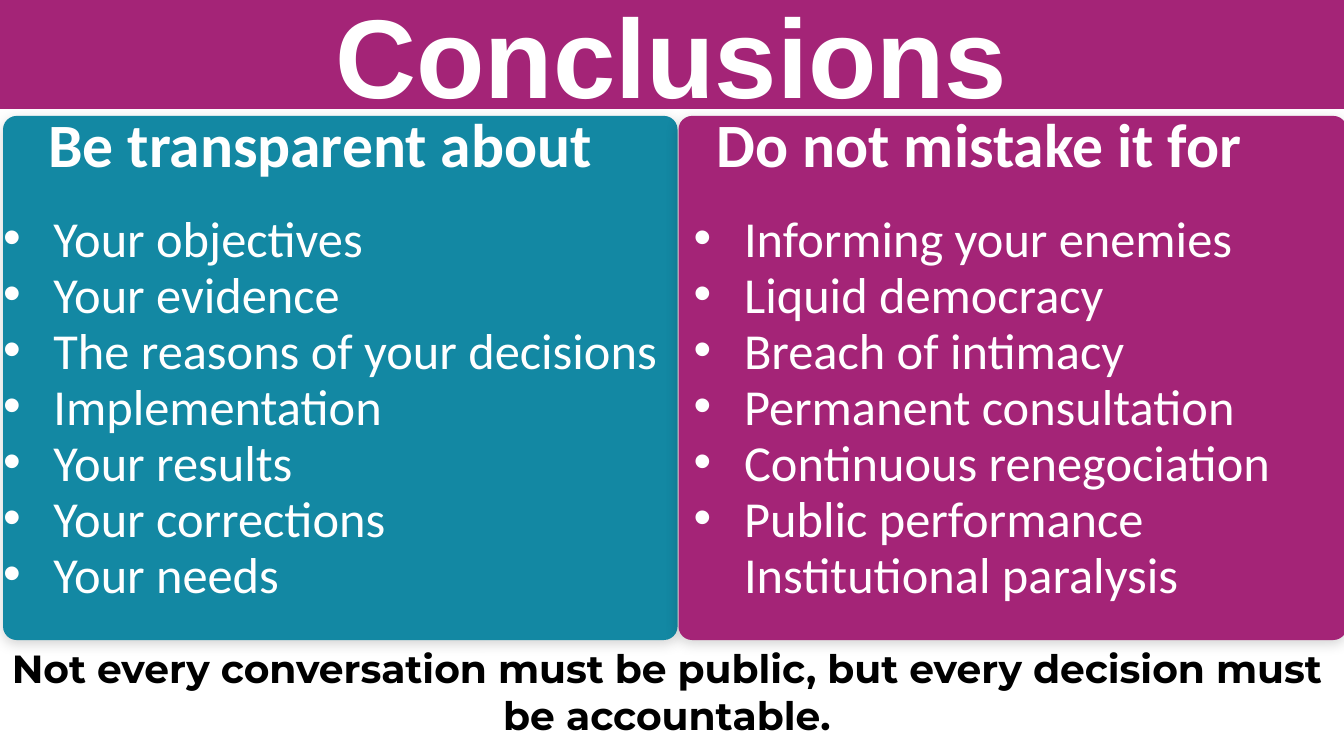
from lxml.etree import SubElement
from pptx import Presentation
from pptx.dml.color import RGBColor
from pptx.enum.shapes import MSO_SHAPE as Shape
from pptx.enum.text import MSO_ANCHOR as Anchor, MSO_AUTO_SIZE as AutoSize, PP_ALIGN as Align
from pptx.oxml.ns import qn
from pptx.util import Inches, Pt

COLORS = {"teal": "1388A3", "magenta": "A42477", "white": "FFFFFF", "black": "000000"}

COLUMNS = [
    {
        "color": "teal",
        "panel": (0.03, 1.15, 6.69, 5.2),
        "heading": "Be transparent about",
        "heading_box": (0.48, 1.07, 5.86, 0.7),
        "list_box": (0.03, 2.1, 6.61, 4.01),
        "items": [
            "Your objectives",
            "Your evidence",
            "The reasons of your decisions",
            "Implementation",
            "Your results",
            "Your corrections",
            "Your needs",
        ],
    },
    {
        "color": "magenta",
        "panel": (6.73, 1.15, 6.63, 5.2),
        "heading": "Do not mistake it for",
        "heading_box": (7.11, 1.07, 5.5, 0.7),
        "list_box": (6.88, 2.1, 6.38, 3.93),
        "items": [
            "Informing your enemies",
            "Liquid democracy",
            "Breach of intimacy",
            "Permanent consultation",
            "Continuous renegociation",
            "Public performance Institutional paralysis",
        ],
    },
]


def rgb(name):
    return RGBColor.from_string(COLORS[name])


def add_bullet(paragraph):
    properties = paragraph._p.get_or_add_pPr()
    properties.set("marL", str(Inches(0.5)))
    properties.set("indent", str(-Inches(0.5)))
    SubElement(properties, qn("a:buFont"), typeface="Arial")
    SubElement(properties, qn("a:buChar"), char="•")


def write_text(paragraph, text, size, font="Calibri", color="white", bold=False,
               align=Align.LEFT, bullet=False, spacing=None):
    if bullet:
        add_bullet(paragraph)
    paragraph.alignment = align
    if spacing:
        paragraph.line_spacing = Pt(spacing)
    run = paragraph.add_run()
    run.text = text
    run.font.size = Pt(size)
    run.font.name = font
    run.font.bold = bold
    run.font.color.rgb = rgb(color)


class SlideBuilder:
    def __init__(self, presentation):
        self.slide = presentation.slides.add_slide(presentation.slide_layouts[5])

    def title(self, text, box, color):
        shape = self.slide.shapes.title
        shape.left, shape.top, shape.width, shape.height = map(Inches, box)
        shape.fill.solid()
        shape.fill.fore_color.rgb = rgb(color)
        shape.line.color.rgb = rgb(color)
        shape.line.width = Pt(2)
        frame = shape.text_frame
        frame.auto_size = AutoSize.NONE
        frame.vertical_anchor = Anchor.MIDDLE
        write_text(frame.paragraphs[0], text, 80, font="Arial", bold=True, align=Align.CENTER)

    def panel(self, box, color):
        shape = self.slide.shapes.add_shape(Shape.ROUNDED_RECTANGLE, *map(Inches, box))
        shape.adjustments[0] = 0.026
        shape.fill.solid()
        shape.fill.fore_color.rgb = rgb(color)
        shape.line.fill.background()
        shape.shadow.inherit = False
        effects = shape._element.spPr.find(qn("a:effectLst"))
        shadow = SubElement(effects, qn("a:outerShdw"), blurRad=str(Pt(9)),
                            dist=str(Pt(3)), dir="5400000", rotWithShape="0")
        shade = SubElement(shadow, qn("a:srgbClr"), val=COLORS["black"])
        SubElement(shade, qn("a:alpha"), val="16000")

    def text(self, lines, box, anchor=Anchor.TOP, **style):
        frame = self.slide.shapes.add_textbox(*map(Inches, box)).text_frame
        frame.word_wrap = True
        frame.vertical_anchor = anchor
        frame.margin_left = frame.margin_right = frame.margin_top = frame.margin_bottom = 0
        for index, line in enumerate(lines):
            paragraph = frame.add_paragraph() if index else frame.paragraphs[0]
            write_text(paragraph, line, **style)


def main():
    presentation = Presentation()
    presentation.slide_width = Inches(13.33)
    presentation.slide_height = Inches(7.5)
    builder = SlideBuilder(presentation)
    builder.title("Conclusions", (0, 0, 13.33, 1.07), "magenta")
    for column in COLUMNS:
        builder.panel(column["panel"], column["color"])
    for column in COLUMNS:
        builder.text([column["heading"]], column["heading_box"], Anchor.MIDDLE, size=44, bold=True)
        builder.text(column["items"], column["list_box"], size=36, bullet=True, spacing=40)
    builder.text(
        ["Not every conversation must be public, but every decision must be accountable."],
        (0, 6.66, 13.23, 0.4), Anchor.MIDDLE,
        size=28, font="Montserrat", color="black", bold=True, align=Align.CENTER,
    )
    presentation.save("out.pptx")


if __name__ == "__main__":
    main()
